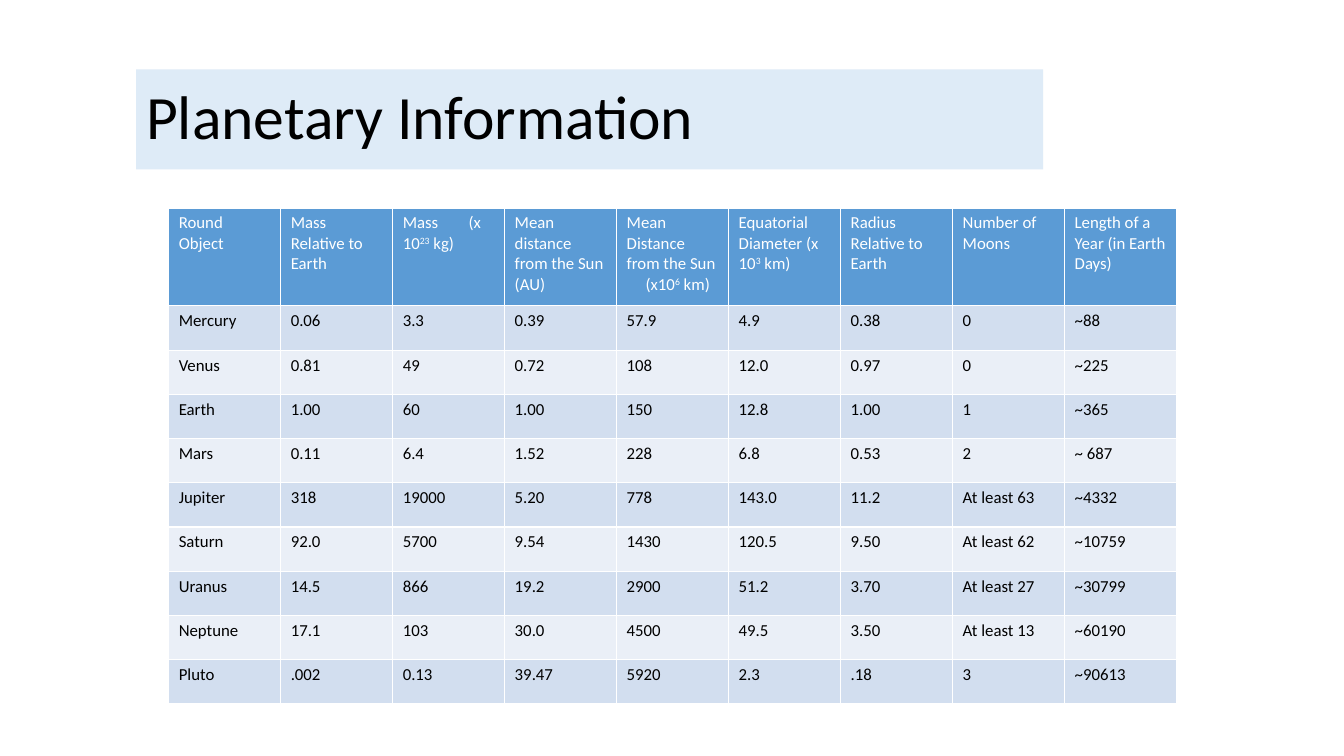
from lxml import etree
from pptx import Presentation
from pptx.dml.color import RGBColor
from pptx.enum import text
from pptx.oxml import ns
from pptx.util import Pt

COLORS = {"banner": "DEEBF7", "header": "5B9BD5", "odd": "D2DEEF",
          "even": "EAEFF7", "dark": "000000", "light": "FFFFFF"}
FONT = "Calibri"
COLUMN_WIDTH, HEADER_HEIGHT, BODY_HEIGHT = 80, 70, 31.6

# Header parts alternate between normal and superscript text
HEADERS = [
    ["Round Object"],
    ["Mass Relative to Earth"],
    ["Mass\t(x 10", "23", " kg)"],
    ["Mean distance from the Sun (AU)"],
    ["Mean Distance from the Sun\v\t(x10", "6", " km)"],
    ["Equatorial Diameter (x 10", "3", " km)"],
    ["Radius Relative to Earth"],
    ["Number of Moons"],
    ["Length of a Year (in Earth Days)"],
]
TAB_STOPS = {2: 47, 4: 13.5}  # column index: position
PLANETS = [
    ["Mercury", "0.06", "3.3", "0.39", "57.9", "4.9", "0.38", "0", "~88"],
    ["Venus", "0.81", "49", "0.72", "108", "12.0", "0.97", "0", "~225"],
    ["Earth", "1.00", "60", "1.00", "150", "12.8", "1.00", "1", "~365"],
    ["Mars", "0.11", "6.4", "1.52", "228", "6.8", "0.53", "2", "~ 687"],
    ["Jupiter", "318", "19000", "5.20", "778", "143.0", "11.2", "At least 63", "~4332"],
    ["Saturn", "92.0", "5700", "9.54", "1430", "120.5", "9.50", "At least 62", "~10759"],
    ["Uranus", "14.5", "866", "19.2", "2900", "51.2", "3.70", "At least 27", "~30799"],
    ["Neptune", "17.1", "103", "30.0", "4500", "49.5", "3.50", "At least 13", "~60190"],
    ["Pluto", ".002", "0.13", "39.47", "5920", "2.3", ".18", "3", "~90613"],
]


def rgb(name):
    return RGBColor.from_string(COLORS[name])


def style_font(font, size, color):
    font.name, font.size, font.bold = FONT, Pt(size), False
    font.color.rgb = rgb(color)


def add_title(slide, wording):
    title = slide.shapes.title
    title.left, title.top, title.width, title.height = Pt(97.2), Pt(49.5), Pt(648), Pt(71.5)
    title.fill.solid()
    title.fill.fore_color.rgb = rgb("banner")
    frame = title.text_frame
    frame.text = wording
    frame.auto_size = text.MSO_AUTO_SIZE.NONE
    frame.vertical_anchor = text.MSO_ANCHOR.MIDDLE
    heading = frame.paragraphs[0]
    heading.alignment = text.PP_ALIGN.LEFT
    heading.line_spacing = 0.9
    style_font(heading.font, 44, "dark")


def add_tab_stop(paragraph, position):
    stops = etree.SubElement(paragraph._p.get_or_add_pPr(), ns.qn("a:tabLst"))
    etree.SubElement(stops, ns.qn("a:tab"), pos=str(Pt(position)), algn="l")


def fill_cell(cell, parts, fill, color, tab_stop=None):
    cell.fill.solid()
    cell.fill.fore_color.rgb = rgb(fill)
    paragraph = cell.text_frame.paragraphs[0]
    if tab_stop:
        add_tab_stop(paragraph, tab_stop)
    for index, part in enumerate(parts):
        for line_number, line in enumerate(part.split("\v")):
            if line_number:
                paragraph.add_line_break()
            run = paragraph.add_run()
            run.text = line
            if index % 2:
                run._r.get_or_add_rPr().set("baseline", "30000")
    style_font(paragraph.font, 12, color)


def add_planet_table(slide):
    row_count, column_count = len(PLANETS) + 1, len(HEADERS)
    table = slide.shapes.add_table(
        row_count, column_count, Pt(120.5), Pt(148.5), Pt(COLUMN_WIDTH * column_count),
        Pt(HEADER_HEIGHT + BODY_HEIGHT * len(PLANETS))).table
    for column in table.columns:
        column.width = Pt(COLUMN_WIDTH)
    for index, row in enumerate(table.rows):
        row.height = Pt(BODY_HEIGHT if index else HEADER_HEIGHT)

    # Header row
    for column, parts in enumerate(HEADERS):
        fill_cell(table.cell(0, column), parts, "header", "light", TAB_STOPS.get(column))

    # One banded row per planet
    for row, planet in enumerate(PLANETS, 1):
        for column, value in enumerate(planet):
            fill_cell(table.cell(row, column), [value], "odd" if row % 2 else "even", "dark")


def main():
    deck = Presentation()
    deck.slide_width, deck.slide_height = Pt(960), Pt(540)
    slide = deck.slides.add_slide(deck.slide_layouts.get_by_name("Title Only"))
    add_title(slide, "Planetary Information")
    add_planet_table(slide)
    deck.save("out.pptx")


if __name__ == "__main__":
    main()
